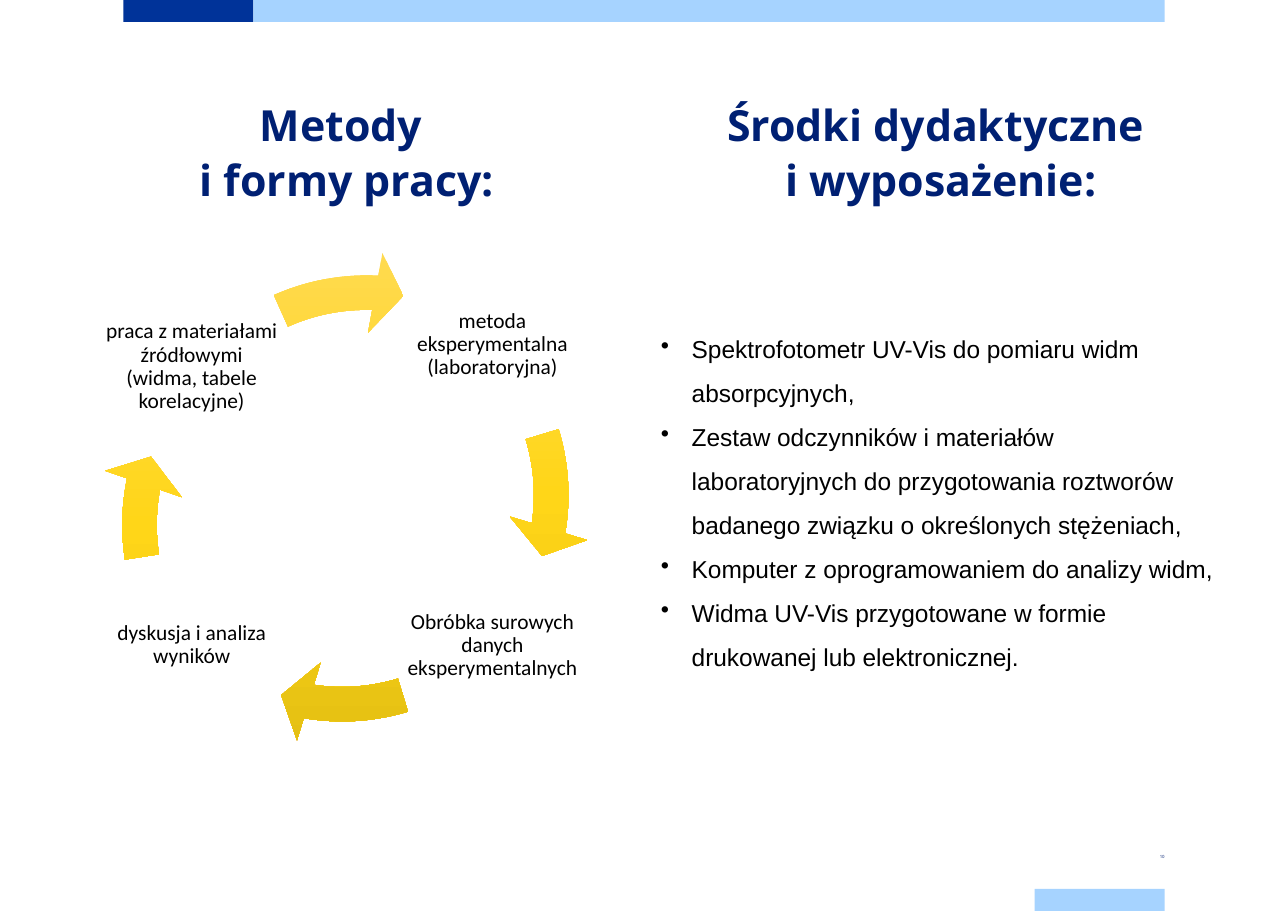
import pptx
import pptx.dml.color
import pptx.enum.shapes
import pptx.enum.text
import pptx.oxml
import pptx.oxml.ns
import pptx.util

Inches = pptx.util.Inches
Pt = pptx.util.Pt
RGB = pptx.dml.color.RGBColor.from_string
MSO_SHAPE = pptx.enum.shapes.MSO_SHAPE
ALIGN = pptx.enum.text.PP_ALIGN
ANCHOR = pptx.enum.text.MSO_ANCHOR

THEME = {
    "navy": "003399",
    "sky": "A6D3FF",
    "arrow_stops": [(0, "FFDA4F"), (50, "FFD618"), (100, "E5C013")],
    "heading": {"name": "Open Sans", "size": Pt(28), "bold": True, "color": "002073"},
    "step": {"name": "Calibri", "size": Pt(14), "bold": False, "color": "000000"},
    "list": {"name": "Arial", "size": Pt(16), "bold": False, "color": "000000"},
    "number": {"name": "Open Sans", "size": Pt(2.8), "bold": False, "color": "002073"},
}

BARS = [
    ((1.12, 0, 1.18, 0.2), "navy"),
    ((2.3, 0, 8.27, 0.2), "sky"),
    ((9.39, 8.07, 1.18, 0.2), "sky"),
]
HEADINGS = [
    ((0.94, 0.86, 4.41, 1.18), ["Metody \vi formy pracy:"]),
    ((6.24, 0.86, 4.6, 1.18), ["Środki dydaktyczne ", "i wyposażenie:"]),
]
STEP_SIZE = 1.6
STEPS = [
    ((3.67, 2.33), "metoda eksperymentalna (laboratoryjna)"),
    ((3.67, 5.06), "Obróbka surowych danych eksperymentalnych"),
    ((0.94, 5.06), "dyskusja i analiza wyników"),
    ((0.94, 2.53), "praca z materiałami źródłowymi (widma, tabele korelacyjne)"),
]
RING_SIZE = 4.53
BAND, HEAD_ANGLE, HEAD_WIDTH = 0.069, 4.653, 0.081
ARROWS = [
    ((0.84, 2.23), 5.495, 205.852),
    ((0.84, 2.23), 59.495, 43.852),
    ((0.9, 2.5), 114.759, 102.699),
    ((1.06, 2.29), 163.478, 147.548),
]
EQUIPMENT = [
    "Spektrofotometr UV-Vis do pomiaru widm absorpcyjnych,",
    "Zestaw odczynników i materiałów laboratoryjnych do przygotowania roztworów "
    "badanego związku o określonych stężeniach,",
    "Komputer z oprogramowaniem do analizy widm,",
    "Widma UV-Vis przygotowane w formie drukowanej lub elektronicznej.",
]
EQUIPMENT_BOX = (5.9, 2.86, 5.29, 3.28)
BULLET_INDENT = 0.28
PAGE_NUMBER = "10"
PAGE_NUMBER_BOX = (9.39, 7.68, 1.18, 0.2)


def add_plain_shape(slide, kind, box):
    sp = slide.shapes.add_shape(kind, *map(Inches, box))
    sp.shadow.inherit = False
    sp.line.fill.background()
    return sp


def fill_gradient(sp):
    stops = "".join(
        f'<a:gs pos="{pos * 1000}"><a:srgbClr val="{color}"/></a:gs>'
        for pos, color in THEME["arrow_stops"]
    )
    gradient = pptx.oxml.parse_xml(
        f'<a:gradFill {pptx.oxml.ns.nsdecls("a")} rotWithShape="1">'
        f'<a:gsLst>{stops}</a:gsLst><a:lin ang="5400000" scaled="0"/></a:gradFill>'
    )
    sp.element.spPr.find(pptx.oxml.ns.qn("a:prstGeom")).addnext(gradient)


def add_bullet(p):
    pPr = p._p.get_or_add_pPr()
    pPr.set("marL", str(Inches(BULLET_INDENT)))
    pPr.set("indent", str(-Inches(BULLET_INDENT)))
    pPr.append(pptx.oxml.parse_xml(
        f'<a:buChar {pptx.oxml.ns.nsdecls("a")} char="•"/>'
    ))


def add_text(slide, box, lines, style, spacing, align=ALIGN.CENTER,
             anchor=ANCHOR.MIDDLE, insets=(0, 0), bullets=False):
    tf = slide.shapes.add_textbox(*map(Inches, box)).text_frame
    side, end = map(Inches, insets)
    frame = {
        "word_wrap": True, "vertical_anchor": anchor,
        "margin_left": side, "margin_right": side,
        "margin_top": end, "margin_bottom": end,
    }
    for key, value in frame.items():
        setattr(tf, key, value)
    for i, line in enumerate(lines):
        p = tf.add_paragraph() if i else tf.paragraphs[0]
        p.text = line
        p.alignment = align
        p.line_spacing = spacing
        if bullets:
            add_bullet(p)
        for r in p.runs:
            for key, value in THEME[style].items():
                if key == "color":
                    r.font.color.rgb = RGB(value)
                else:
                    setattr(r.font, key, value)


def main():
    prs = pptx.Presentation()
    prs.slide_width, prs.slide_height = Inches(11.69), Inches(8.27)
    slide = prs.slides.add_slide(prs.slide_layouts[6])

    for box, color in BARS:
        sp = add_plain_shape(slide, MSO_SHAPE.RECTANGLE, box)
        sp.fill.solid()
        sp.fill.fore_color.rgb = RGB(THEME[color])

    for box, lines in HEADINGS:
        add_text(slide, box, lines, "heading", Pt(36), anchor=ANCHOR.TOP)

    for (corner, text), (ring, tip, tail) in zip(STEPS, ARROWS):
        add_text(slide, (*corner, STEP_SIZE, STEP_SIZE), [text], "step", 0.9,
                 insets=(0.02, 0.02))
        sp = add_plain_shape(slide, MSO_SHAPE.CIRCULAR_ARROW,
                             (*ring, RING_SIZE, RING_SIZE))
        for i, value in enumerate((BAND, HEAD_ANGLE, tip, tail, HEAD_WIDTH)):
            sp.adjustments[i] = value
        fill_gradient(sp)

    add_text(slide, PAGE_NUMBER_BOX, [PAGE_NUMBER], "number", 0.7,
             align=ALIGN.RIGHT, insets=(0, 0.08))
    add_text(slide, EQUIPMENT_BOX, EQUIPMENT, "list", 1.5, align=ALIGN.LEFT,
             insets=(0.1, 0.05), bullets=True)

    prs.save("out.pptx")


if __name__ == "__main__":
    main()
